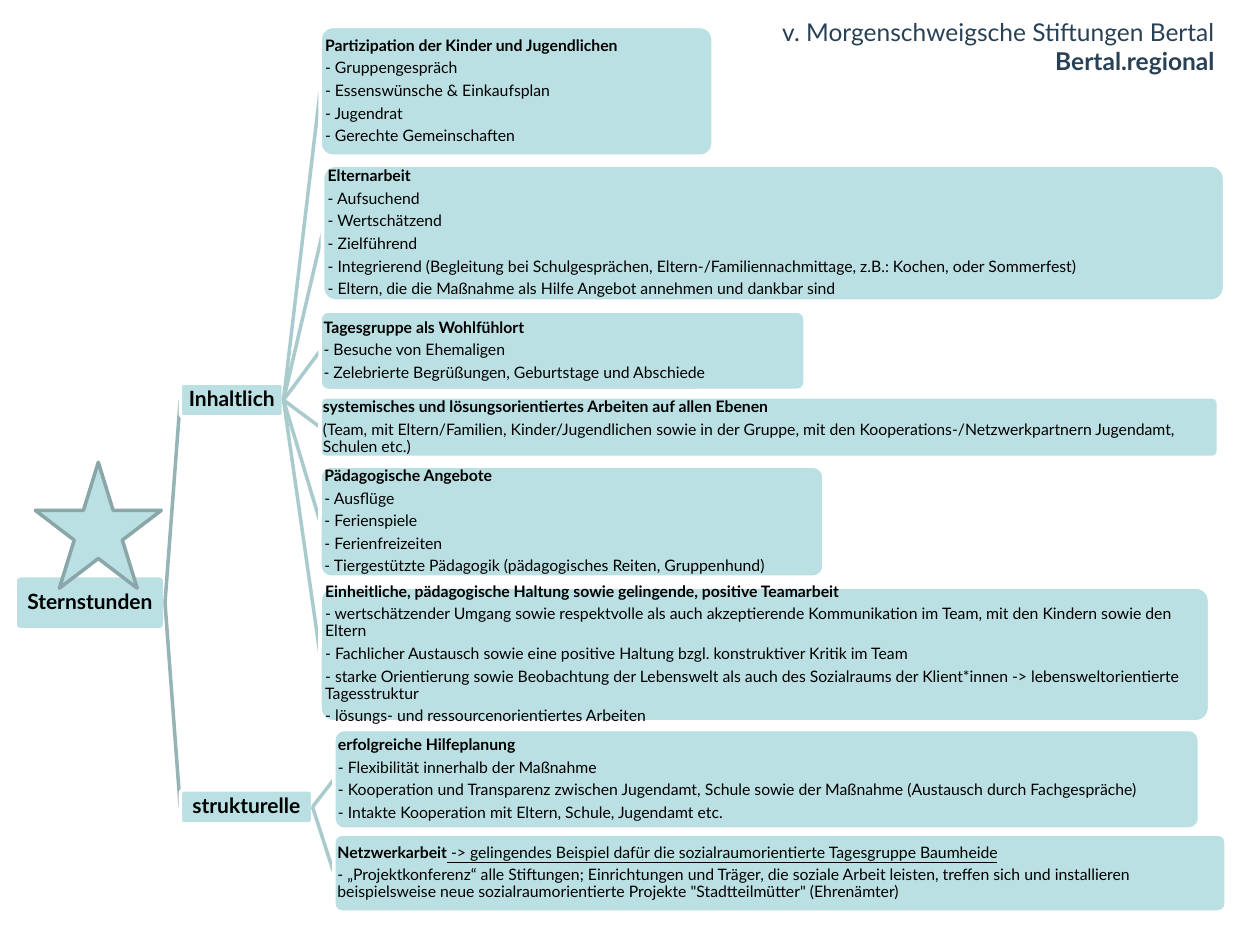
from pptx import Presentation
from pptx.dml.color import RGBColor
from pptx.enum.shapes import MSO_CONNECTOR, MSO_SHAPE
from pptx.enum.text import MSO_ANCHOR, PP_ALIGN
from pptx.oxml.ns import qn
from pptx.util import Pt
from lxml import etree

STRAIGHT = MSO_CONNECTOR.STRAIGHT
ROUNDED, STAR = MSO_SHAPE.ROUNDED_RECTANGLE, MSO_SHAPE.STAR_5_POINT
MIDDLE, BOTTOM = MSO_ANCHOR.MIDDLE, MSO_ANCHOR.BOTTOM
LEFT, CENTER, RIGHT = PP_ALIGN.LEFT, PP_ALIGN.CENTER, PP_ALIGN.RIGHT
LEFT_SITE, RIGHT_SITE = 1, 3

FONT = "Lato"
BLACK = RGBColor(0x00, 0x00, 0x00)
WHITE = RGBColor(0xFF, 0xFF, 0xFF)
NAVY = RGBColor(0x28, 0x41, 0x56)
AQUA = RGBColor(0xBB, 0xE0, 0xE3)
STAR_LINE = RGBColor(0x8A, 0xA6, 0xA8)
TRUNK_LINE = RGBColor(0x96, 0xB3, 0xB6)
BRANCH_LINE = RGBColor(0xAA, 0xCB, 0xCE)

HEADER = ["v. Morgenschweigsche Stiftungen Bertal", "Bertal.regional"]

# Each topic: left, top, width, height, heading, underlined addition, lines
CONTENT_TOPICS = [
    (182.9, 15.1, 224.6, 74.2, "Partizipation der Kinder und Jugendlichen", "", [
        "- Gruppengespräch",
        "- Essenswünsche & Einkaufsplan",
        "- Jugendrat",
        "- Gerechte Gemeinschaften"]),
    (184.3, 94.3, 515.5, 77.8, "Elternarbeit", "", [
        "- Aufsuchend",
        "- Wertschätzend",
        "- Zielführend",
        "- Integrierend (Begleitung bei Schulgesprächen, Eltern-/Familiennachmittage, "
        "z.B.: Kochen, oder Sommerfest)",
        "- Eltern, die die Maßnahme als Hilfe Angebot annehmen und dankbar sind"]),
    (182.9, 177.8, 277.2, 45.4, "Tagesgruppe als Wohlfühlort", "", [
        "- Besuche von Ehemaligen",
        "- Zelebrierte Begrüßungen, Geburtstage und Abschiede"]),
    (182.9, 226.8, 513.4, 34.6,
     "systemisches und lösungsorientiertes Arbeiten auf allen Ebenen", "", [
        "(Team, mit Eltern/Familien, Kinder/Jugendlichen sowie in der Gruppe, "
        "mit den Kooperations-/Netzwerkpartnern Jugendamt, Schulen etc.)"]),
    (182.9, 266.4, 288, 63.4, "Pädagogische Angebote", "", [
        "- Ausflüge",
        "- Ferienspiele",
        "- Ferienfreizeiten",
        "- Tiergestützte Pädagogik (pädagogisches Reiten, Gruppenhund)"]),
    (182.9, 335.5, 508.3, 77,
     "Einheitliche, pädagogische Haltung sowie gelingende, positive Teamarbeit", "", [
        "- wertschätzender Umgang sowie respektvolle als auch akzeptierende "
        "Kommunikation im Team, mit den Kindern sowie den Eltern",
        "- Fachlicher Austausch sowie eine positive Haltung bzgl. konstruktiver "
        "Kritik im Team",
        "- starke Orientierung sowie Beobachtung der Lebenswelt als auch des "
        "Sozialraums der Klient*innen -> lebensweltorientierte Tagesstruktur",
        "- lösungs- und ressourcenorientiertes Arbeiten"]),
]
STRUCTURE_TOPICS = [
    (190.8, 416.9, 494.6, 56.9, "erfolgreiche Hilfeplanung", "", [
        "- Flexibilität innerhalb der Maßnahme",
        "- Kooperation und Transparenz zwischen Jugendamt, Schule sowie der Maßnahme "
        "(Austausch durch Fachgespräche)",
        "- Intakte Kooperation mit Eltern, Schule, Jugendamt etc."]),
    (190.8, 476.6, 509.8, 44.6, "Netzwerkarbeit",
     " -> gelingendes Beispiel dafür die sozialraumorientierte Tagesgruppe Baumheide", [
        "- „Projektkonferenz“ alle Stiftungen; Einrichtungen und Träger, die soziale "
        "Arbeit leisten, treffen sich und installieren beispielsweise neue "
        "sozialraumorientierte Projekte \"Stadtteilmütter\" (Ehrenämter)"]),
]
# Each branch: left, top, width, height, label, topics
BRANCHES = [
    (103, 218.9, 59, 19.4, "Inhaltlich", CONTENT_TOPICS),
    (103, 451.4, 75.6, 19.4, "strukturelle", STRUCTURE_TOPICS),
]


def add_filled_shape(page, kind, bounds, line_color):
    shape = page.shapes.add_shape(kind, *map(Pt, bounds))
    shape.shadow.inherit = False
    shape.fill.solid()
    shape.fill.fore_color.rgb = AQUA
    shape.line.color.rgb = line_color
    shape.line.width = Pt(2)
    return shape


def prepare_frame(frame, inset, anchor):
    frame.word_wrap = True
    frame.margin_left = frame.margin_right = Pt(inset)
    frame.margin_top = frame.margin_bottom = Pt(inset)
    frame.vertical_anchor = anchor


def format_para(para, size, color, bold, align):
    para.alignment = align
    para.font.name = FONT
    para.font.size = Pt(size)
    para.font.color.rgb = color
    para.font.bold = bold


def add_box(page, bounds, lines, size, align):
    """Rounded box whose first line is bold."""
    box = add_filled_shape(page, ROUNDED, bounds, WHITE)
    box.adjustments[0] = 0.1
    frame = box.text_frame
    prepare_frame(frame, 0.7, MIDDLE)
    frame.text = "\n".join(lines)
    for index, para in enumerate(frame.paragraphs):
        format_para(para, size, BLACK, index == 0, align)
        para.line_spacing = 0.9
        para.space_after = Pt(0.35 * size)
    return box


def add_link(page, color):
    link = page.shapes.add_connector(STRAIGHT, 0, 0, 0, 0)
    link.line.color.rgb = color
    link.line.width = Pt(2)
    etree.SubElement(link._element.spPr, qn("a:effectLst"))
    return link


def add_child(page, parent, link_color, bounds, lines, size, align):
    """Box joined to its parent by a line that lies behind the box."""
    link = add_link(page, link_color)
    child = add_box(page, bounds, lines, size, align)
    link.begin_connect(parent, RIGHT_SITE)
    link.end_connect(child, LEFT_SITE)
    return child


def add_topic(page, branch, topic):
    *bounds, heading, addition, lines = topic
    box = add_child(page, branch, BRANCH_LINE, bounds, [heading, *lines], 9, LEFT)
    if addition:
        span = box.text_frame.paragraphs[0].add_run()
        span.text = addition
        span.font.bold = False
        span.font.underline = True


def add_header(page):
    box = page.shapes.add_textbox(Pt(297.4), Pt(7.2), Pt(396.7), Pt(36))
    prepare_frame(box.text_frame, 0, BOTTOM)
    box.text_frame.text = "\n".join(HEADER)
    for index, para in enumerate(box.text_frame.paragraphs):
        format_para(para, 14, NAVY, index == 1, RIGHT)


def main():
    deck = Presentation()
    deck.slide_width, deck.slide_height = Pt(720), Pt(540)
    page = deck.slides.add_slide(deck.slide_layouts[6])
    add_header(page)
    root = add_box(page, (8.6, 329, 85.7, 31), ["Sternstunden"], 12, CENTER)
    for *bounds, label, topics in BRANCHES:
        branch = add_child(page, root, TRUNK_LINE, bounds, [label], 12, CENTER)
        for topic in topics:
            add_topic(page, branch, topic)
    add_filled_shape(page, STAR, (20.2, 264.2, 72, 72), STAR_LINE)
    deck.save("out.pptx")


if __name__ == "__main__":
    main()
